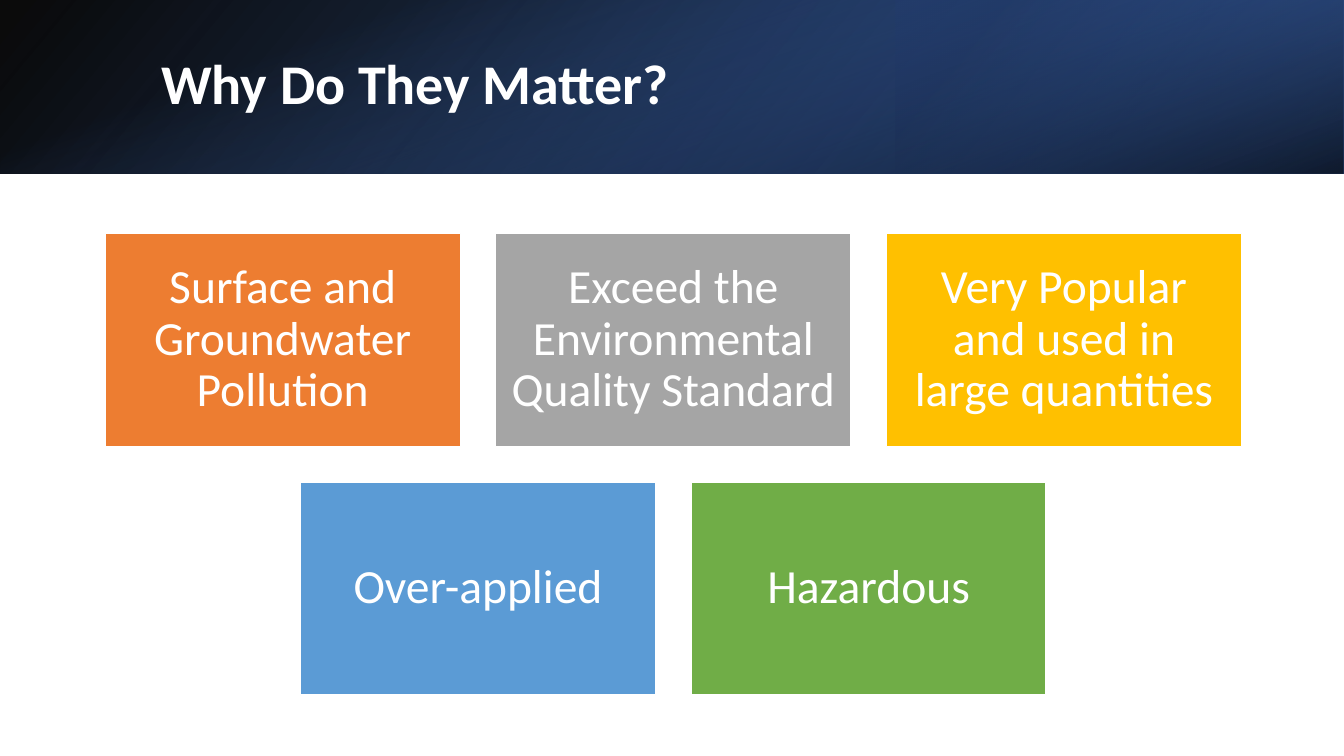
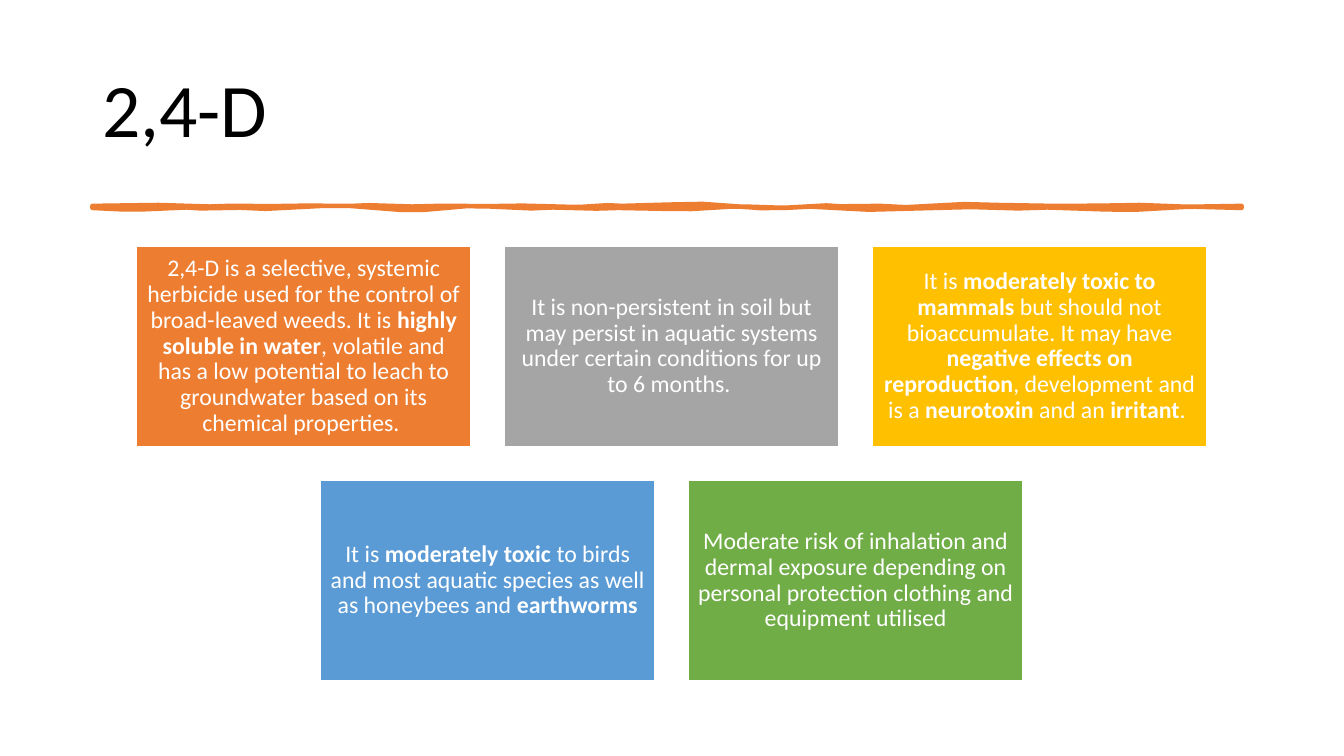
from typing import NamedTuple

import lxml.etree
import pptx
import pptx.dml.color
import pptx.enum.shapes
import pptx.enum.text
import pptx.oxml.ns
import pptx.util

Cm = pptx.util.Cm
Pt = pptx.util.Pt
RECT = pptx.enum.shapes.MSO_SHAPE.RECTANGLE
ALIGN = pptx.enum.text.PP_ALIGN
MIDDLE = pptx.enum.text.MSO_ANCHOR.MIDDLE
qn = pptx.oxml.ns.qn

FONT = "Calibri"
WIDE, HIGH, BAND = 33.87, 19.05, 4.37
HEX = {
    "white": "FFFFFF", "black": "000000", "orange": "ED7D31",
    "gray": "A5A5A5", "gold": "FFC000", "sky": "5B9BD5",
    "green": "70AD47", "blue": "4472C4", "navy": "203864", "deep": "2F5597",
}
FILLS = ("orange", "gray", "gold", "sky", "green")


class Box(NamedTuple):
    left: float
    top: float
    width: float
    height: float


class Stop(NamedTuple):
    place: float
    color: str
    alpha: int


class Layer(NamedTuple):
    box: Box
    turn: int
    flip: bool
    angle: int
    stops: tuple[Stop, Stop]


class Title(NamedTuple):
    text: str
    box: Box
    size: int
    color: str
    bold: bool


class Grid(NamedTuple):
    """Three tiles above two centred ones; * switches bold in the texts."""
    left: float
    top: float
    width: float
    inset: float
    size: int
    texts: tuple[str, ...]


class Wave(NamedTuple):
    """End of a stroke section and the pull of its two control points."""
    end: float
    first: int
    last: int


LAYERS = (
    Layer(Box(0, 0, WIDE, BAND), 0, True, 140,
          (Stop(0, "black", 96), Stop(1, "deep", 100))),
    Layer(Box(22.58, 0, 11.29, BAND), 180, True, 320,
          (Stop(0.19, "navy", 68), Stop(1, "blue", 79))),
    Layer(Box((WIDE - BAND) / 2, (BAND - WIDE) / 2, BAND, WIDE), 90, False, 340,
          (Stop(0.23, "blue", 0), Stop(0.99, "black", 74))),
)

# Upper edge runs right, lower edge runs back left
START, RISE, PULL = 2.33, 0.05, 0.025
UPPER = (
    Wave(4.83, 0, -2), Wave(6.2, 2, -1), Wave(8.41, 1, -1), Wave(9.75, 1, -2),
    Wave(11.68, 2, -1), Wave(13.92, 1, -1), Wave(14.96, 1, 2),
    Wave(16.03, -2, 1), Wave(18.54, -1, -4), Wave(20.47, 4, 2),
    Wave(21.54, -2, 2), Wave(23.47, -2, 4), Wave(25.98, -4, 0),
    Wave(27.61, 0, 0), Wave(29.26, 0, -2), Wave(31.29, 2, 0),
)
LOWER = (
    Wave(29.36, 0, -3), Wave(27.13, 3, 2), Wave(24.92, -2, 2),
    Wave(23.57, -2, 0), Wave(21.06, 0, 4), Wave(19.13, -4, 2),
    Wave(18.06, -2, -2), Wave(16.13, 2, 1), Wave(14.48, -1, 2),
    Wave(12.85, -2, 2), Wave(11.2, -2, -3), Wave(9.58, 3, 3),
    Wave(7.34, -3, -3), Wave(5.41, 3, -2), Wave(4.34, 2, -2),
    Wave(START, 2, 2),
)

WHY = Grid(2.65, 5.88, 8.95, 0.35, 34, (
    "Surface and Groundwater Pollution",
    "Exceed the Environmental Quality Standard",
    "Very Popular and used in large quantities",
    "Over-applied",
    "Hazardous",
))
FACTS = Grid(3.44, 6.2, 8.43, 0.18, 17, (
    "2,4-D is a selective, systemic herbicide used for the control of "
    "broad-leaved weeds. It is *highly soluble in water*, volatile and has a "
    "low potential to leach to groundwater based on its chemical properties. ",
    "It is non-persistent in soil but may persist in aquatic systems under "
    "certain conditions for up to 6 months. ",
    "It is *moderately toxic to mammals *but should not bioaccumulate. It may "
    "have *negative effects on reproduction*, development and is a "
    "*neurotoxin* and an *irritant*. ",
    "It is *moderately toxic *to birds and most aquatic species as well as "
    "honeybees and *earthworms*",
    "Moderate risk of inhalation and dermal exposure depending on personal "
    "protection clothing and equipment utilised",
))


def rgb(name: str) -> pptx.dml.color.RGBColor:
    return pptx.dml.color.RGBColor.from_string(HEX[name])


def style(para, size: int, color: str, align) -> None:
    para.alignment = align
    para.line_spacing = 0.9
    para.font.name = FONT
    para.font.size = Pt(size)
    para.font.color.rgb = rgb(color)


def add_rect(slide, box: Box):
    shape = slide.shapes.add_shape(RECT, *map(Cm, box))
    shape.shadow.inherit = False
    return shape


def add_title(slide, title: Title) -> None:
    shape = slide.shapes.title
    shape.left, shape.top, shape.width, shape.height = map(Cm, title.box)
    frame = shape.text_frame
    frame.text = title.text
    frame.word_wrap = True
    frame.vertical_anchor = MIDDLE
    para = frame.paragraphs[0]
    style(para, title.size, title.color, ALIGN.LEFT)
    para.font.bold = title.bold
    # Keep the title in front of the band
    slide.shapes.element.append(shape.element)


def add_layer(slide, layer: Layer) -> None:
    shape = add_rect(slide, layer.box)
    shape.line.fill.background()
    shape.rotation = layer.turn
    if layer.flip:
        shape.element.xpath(".//a:xfrm")[0].set("flipH", "1")
    shape.fill.gradient()
    shape.fill.gradient_angle = 360 - layer.angle
    for mark, stop in zip(shape.fill.gradient_stops, layer.stops):
        mark.position = stop.place
        mark.color.rgb = rgb(stop.color)
    for node, stop in zip(shape.element.xpath(".//a:gs/a:srgbClr"), layer.stops):
        alpha = lxml.etree.SubElement(node, qn("a:alpha"))
        alpha.set("val", str(stop.alpha * 1000))


def add_tile(slide, box: Box, fill: str, grid: Grid, text: str) -> None:
    shape = add_rect(slide, box)
    shape.fill.solid()
    shape.fill.fore_color.rgb = rgb(fill)
    shape.line.color.rgb = rgb("white")
    shape.line.width = Pt(1)
    frame = shape.text_frame
    frame.word_wrap = True
    frame.vertical_anchor = MIDDLE
    frame.margin_left = frame.margin_right = Cm(grid.inset)
    frame.margin_top = frame.margin_bottom = Cm(grid.inset)
    para = frame.paragraphs[0]
    style(para, grid.size, "white", ALIGN.CENTER)
    for index, part in enumerate(text.split("*")):
        if part:
            run = para.add_run()
            run.text = part
            if index % 2:
                run.font.bold = True


def add_grid(slide, grid: Grid) -> None:
    gap, height = grid.width * 0.1, grid.width * 0.6
    for index, (fill, text) in enumerate(zip(FILLS, grid.texts)):
        row, col = divmod(index, 3)
        left = grid.left + (col + row / 2) * (grid.width + gap)
        top = grid.top + row * (height + gap)
        add_tile(slide, Box(left, top, grid.width, height), fill, grid, text)


def trace(start: float, base: float, waves: tuple[Wave, ...]) -> list:
    """Two points on each cubic curve, then the end of the edge."""
    dots = []
    for wave in waves:
        for t in (1 / 3, 2 / 3):
            bend = 3 * t * (1 - t) * ((1 - t) * wave.first + t * wave.last)
            x = start + t * (wave.end - start)
            dots.append((Cm(x), Cm(base + PULL * bend)))
        start = wave.end
    return dots + [(Cm(start), Cm(base))]


def add_stroke(slide, top: float) -> None:
    end, low = UPPER[-1].end, top + RISE
    dots = trace(START, top, UPPER) + [(Cm(end), Cm(low))]
    dots += trace(end, low, LOWER)
    pen = slide.shapes.build_freeform(Cm(START), Cm(top))
    pen.add_line_segments(dots, close=True)
    shape = pen.convert_to_shape()
    shape.shadow.inherit = False
    shape.fill.solid()
    shape.fill.fore_color.rgb = rgb("orange")
    shape.line.color.rgb = rgb("orange")
    shape.line.width = Pt(3.25)
    lxml.etree.SubElement(shape.element.xpath(".//a:ln")[0], qn("a:round"))


def main() -> None:
    deck = pptx.Presentation()
    deck.slide_width, deck.slide_height = Cm(WIDE), Cm(HIGH)
    layout = deck.slide_layouts[5]

    # Reasons under a gradient band
    slide = deck.slides.add_slide(layout)
    for layer in LAYERS:
        add_layer(slide, layer)
    add_title(slide, Title("Why Do They Matter?", Box(3.81, 0.95, 27.89, 2.44),
                           40, "white", True))
    add_grid(slide, WHY)

    # Herbicide facts under a brush stroke
    slide = deck.slides.add_slide(layout)
    add_title(slide, Title("2,4-D", Box(2.33, 1.02, 29.21, 3.68),
                           54, "black", False))
    add_stroke(slide, 5.19)
    add_grid(slide, FACTS)

    deck.save("out.pptx")


if __name__ == "__main__":
    main()
